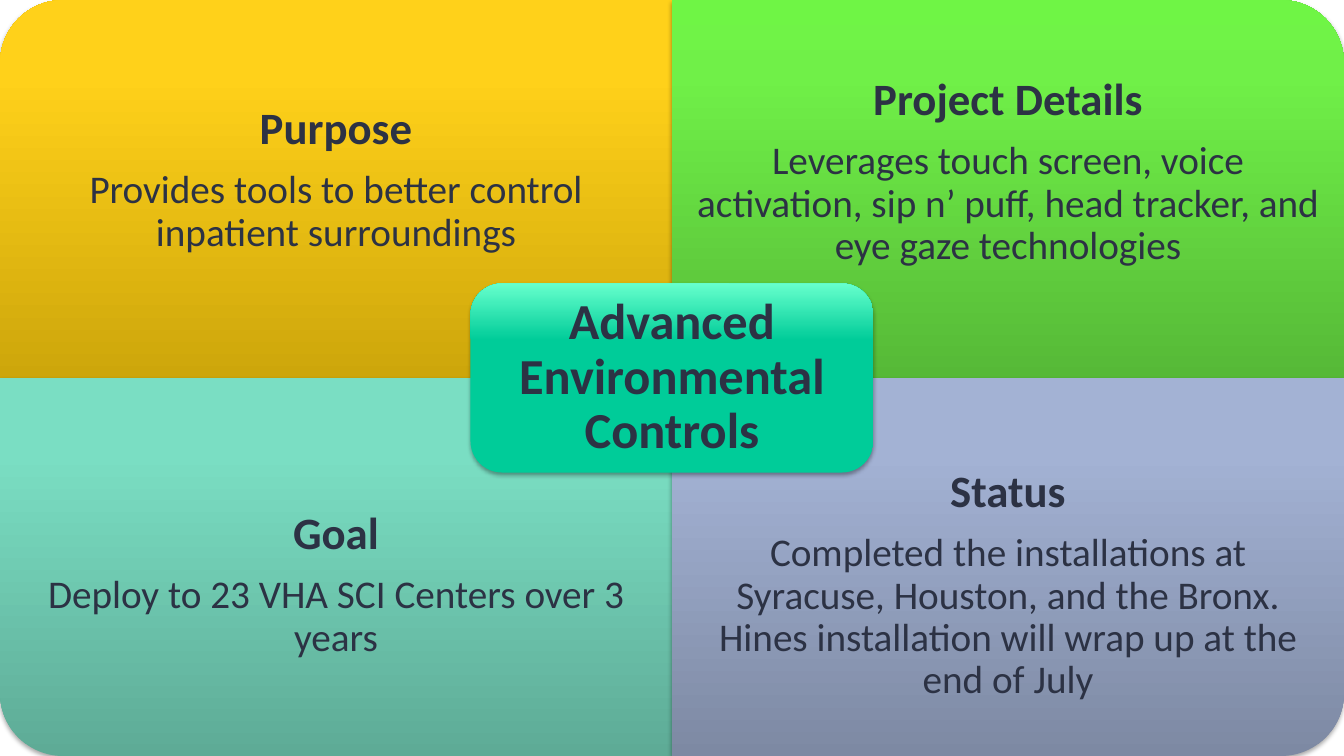
from dataclasses import dataclass
from pptx import Presentation, util as u
from pptx.dml.color import RGBColor
from pptx.enum import shapes, text
from pptx.oxml import parse_xml
from pptx.oxml.ns import qn

NS = 'xmlns:a="http://schemas.openxmlformats.org/drawingml/2006/main"'
PX = 914400 / 100.8
WIDE, HIGH = 1344, 756


@dataclass(frozen=True)
class Theme:
    face: str = "Calibri"
    ink: str = "2C3244"
    hub: int = 36
    head: int = 32
    body: int = 28
    gold: tuple = ((0, "CDA60B"), (80, "FFD11A"), (100, "FFD11B"))
    green: tuple = ((0, "56B937"), (80, "70F048"), (100, "6FF545"))
    teal: tuple = ((0, "5EAB96"), (80, "7ADEC3"), (100, "78E1C5"))
    blue: tuple = ((0, "7D89A3"), (80, "A3B2D4"), (100, "A3B3D6"))
    mint: tuple = ((70, "00CC99"), (100, "66FFCC"))


T = Theme()


def px(*vals):
    return [u.Emu(round(v * PX)) for v in vals]


def apply(obj, vals):
    for key, val in vals.items():
        setattr(obj, key, val)


def paint(shape, stops):
    """Vertical gradient, no outline, soft shadow below."""
    shape.fill.gradient()
    shape.fill.gradient_angle = 90
    grad = shape._element.spPr.find(qn("a:gradFill"))
    grad.set("rotWithShape", "0")
    marks = "".join(f'<a:gs pos="{pos * 1000}"><a:srgbClr val="{hue}"/></a:gs>'
                    for pos, hue in stops)
    grad.replace(grad.find(qn("a:gsLst")),
                 parse_xml(f"<a:gsLst {NS}>{marks}</a:gsLst>"))
    shape.line.fill.background()
    shape.shadow.inherit = False
    shape._element.spPr.find(qn("a:effectLst")).append(parse_xml(
        f'<a:outerShdw {NS} blurRad="40000" dist="23000" dir="5400000" '
        'rotWithShape="0"><a:srgbClr val="000000"><a:alpha val="35000"/>'
        "</a:srgbClr></a:outerShdw>"))


def write(shape, lines, pad, anchor):
    """Fill a shape with centred (words, size, bold) lines."""
    frame = shape.text_frame
    side, = px(pad)
    apply(frame, dict(word_wrap=True, vertical_anchor=anchor, margin_left=side,
                      margin_right=side, margin_top=0, margin_bottom=0))
    for i, (words, size, bold) in enumerate(lines):
        para = frame.add_paragraph() if i else frame.paragraphs[0]
        apply(para, dict(alignment=text.PP_ALIGN.CENTER, line_spacing=0.9))
        if i < len(lines) - 1:
            para.space_after = u.Pt(11.2)
        run = para.add_run()
        run.text = words
        apply(run.font, dict(name=T.face, size=u.Pt(size), bold=bold))
        run.font.color.rgb = RGBColor.from_string(T.ink)


def panel(slide, box, turn, stops, top, pad, head, body):
    """Quarter panel; its rounded corner is turned to the slide's corner."""
    x, y, w, h = box
    sw, sh = (h, w) if turn % 180 else (w, h)
    card = slide.shapes.add_shape(
        shapes.MSO_SHAPE.ROUND_1_RECTANGLE,
        *px(x + (w - sw) / 2, y + (h - sh) / 2, sw, sh))
    card.rotation = turn
    paint(card, stops)
    # Words sit upright in their own box
    note = slide.shapes.add_textbox(*px(x, y + top, w, h - top))
    write(note, [(head, T.head, True), (body, T.body, False)], pad,
          text.MSO_ANCHOR.TOP)


def center(slide, box, words):
    """Rounded hub over the meeting point of the panels."""
    hub = slide.shapes.add_shape(shapes.MSO_SHAPE.ROUNDED_RECTANGLE, *px(*box))
    paint(hub, T.mint)
    write(hub, [(words, T.hub, True)], 25, text.MSO_ANCHOR.MIDDLE)


# Column, row, turn, gradient, text top, side inset, heading, body
PANELS = [
    (0, 0, 270, T.gold, 106, 25, "Purpose",
     "Provides tools to better control inpatient surroundings"),
    (1, 0, 0, T.green, 77, 22, "Project Details",
     "Leverages touch screen, voice activation, sip n’ puff, head tracker, "
     "and eye gaze technologies"),
    (0, 1, 180, T.teal, 133, 25, "Goal",
     "Deploy to 23 VHA SCI Centers over 3 years"),
    (1, 1, 90, T.blue, 91, 25, "Status",
     "Completed the installations at Syracuse, Houston, and the Bronx. "
     "Hines installation will wrap up at the end of July"),
]


def main():
    deck = Presentation()
    deck.slide_width, deck.slide_height = px(WIDE, HIGH)
    slide = deck.slides.add_slide(deck.slide_layouts[6])
    w, h = WIDE // 2, HIGH // 2
    for col, row, *rest in PANELS:
        panel(slide, (col * w, row * h, w, h), *rest)
    hw, hh = 403, h // 2
    center(slide, ((WIDE - hw) / 2, (HIGH - hh) / 2, hw, hh),
           "Advanced Environmental Controls")
    deck.save("out.pptx")


if __name__ == "__main__":
    main()
